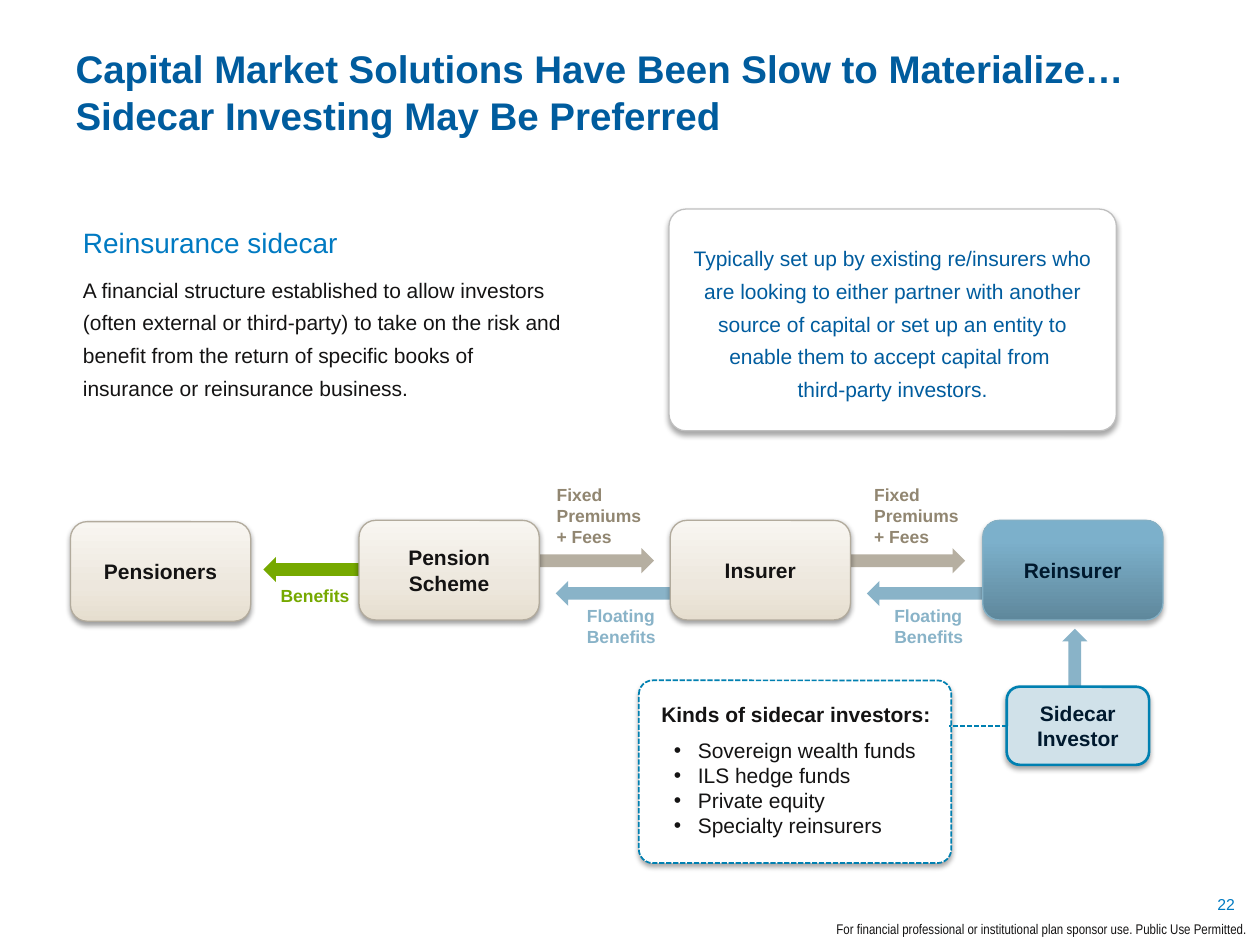
from lxml import etree
from pptx import Presentation
from pptx import util as u
from pptx.dml.color import RGBColor
from pptx.enum import dml, shapes, text
from pptx.oxml.ns import qn

PX = 9144  # 100 px to the inch
FONT = "Arial"
COLORS = {
    "title": "005C9E", "heading": "007AC2", "ink": "141313", "navy": "00192E",
    "white": "FFFFFF", "grey": "BFBFBF", "teal": "0080B1", "pale": "D0E1E9",
    "premium": "B6AFA1", "premium_text": "918671", "benefit": "76A900",
    "floating": "89B3C8", "sand_edge": "B2AB9D", "blue_edge": "84B0C5",
}
SAND = [(0, "E6DECF"), (35, "EDE7DD"), (100, "F8F6F1")]
BLUE = [(0, "5F889C"), (80, "7CB0CB"), (100, "7BB2CD")]
CENTER, RIGHT = text.PP_ALIGN.CENTER, text.PP_ALIGN.RIGHT

prs = Presentation()
prs.slide_width, prs.slide_height = 1000 * PX, 750 * PX
slide = prs.slides.add_slide(prs.slide_layouts[5])


def write(frame, lines, size, color, bold=False, align=None, font=FONT):
    """Add one paragraph per line; a newline inside a line is a soft break."""
    for number, line in enumerate(lines):
        para = frame.paragraphs[0] if number == 0 and not frame.text else frame.add_paragraph()
        para.alignment = align
        for part, words in enumerate(line.split("\n")):
            if part:
                para.add_line_break()
            run = para.add_run()
            run.text = words
            run.font.name, run.font.size, run.font.bold = font, u.Pt(size), bold
            run.font.color.rgb = RGBColor.from_string(COLORS[color])
    return para


def add_box(box, fill, line, weight=0.75, corner=None, shadow=(35, 1.8)):
    """Add a rounded box with a soft shadow; fill is a colour name or gradient stops."""
    shape = slide.shapes.add_shape(shapes.MSO_SHAPE.ROUNDED_RECTANGLE, *[n * PX for n in box])
    if corner:
        shape.adjustments[0] = corner
    if isinstance(fill, str):
        shape.fill.solid()
        shape.fill.fore_color.rgb = RGBColor.from_string(COLORS[fill])
    else:
        shape.fill.gradient()
        shape.fill.gradient_angle = 90
        stops = shape._element.spPr.find(qn("a:gradFill")).find(qn("a:gsLst"))
        for stop in list(stops):
            stops.remove(stop)
        for percent, color in fill:
            stop = etree.SubElement(stops, qn("a:gs"), pos=str(percent * 1000))
            etree.SubElement(stop, qn("a:srgbClr"), val=color)
    shape.line.color.rgb = RGBColor.from_string(COLORS[line])
    shape.line.width = u.Pt(weight)
    shape.shadow.inherit = False
    opacity, distance = shadow
    effects = shape._element.spPr.find(qn("a:effectLst"))
    outer = etree.SubElement(effects, qn("a:outerShdw"), blurRad=str(u.Pt(3.1)),
                             dist=str(u.Pt(distance)), dir="5400000", rotWithShape="0")
    black = etree.SubElement(outer, qn("a:srgbClr"), val="000000")
    etree.SubElement(black, qn("a:alpha"), val=str(opacity * 1000))
    shape.text_frame.word_wrap = True
    shape.text_frame.vertical_anchor = text.MSO_ANCHOR.MIDDLE
    return shape


# Title
title = slide.shapes.title
title.left, title.top, title.width, title.height = 50 * PX, 31 * PX, 950 * PX, 125 * PX
title.text_frame.auto_size = text.MSO_AUTO_SIZE.NONE
title.text_frame.vertical_anchor = text.MSO_ANCHOR.TOP
write(title.text_frame,
      ["Capital Market Solutions Have Been Slow to Materialize…\nSidecar Investing May Be Preferred"],
      22, "title", True, text.PP_ALIGN.LEFT)

# Callout
callout = add_box((531, 166, 355, 176), "white", "grey", corner=0.076)
write(callout.text_frame,
      ["Typically set up by existing re/insurers who are looking to either partner with another "
       "source of capital or set up an entity to enable them to accept capital from \n"
       "third-party investors."], 12, "title", align=CENTER).line_spacing = 1.3

# Flow arrows: left, top, rotation, colour
for left, top, rotation, color in [
    (427, 435, 180, "premium"), (674, 435, 180, "premium"),
    (209, 442, 0, "benefit"),
    (441, 461, 0, "floating"), (688, 461, 0, "floating"),
    (807, 535, 90, "floating"),
]:
    arrow = slide.shapes.add_shape(shapes.MSO_SHAPE.LEFT_ARROW,
                                   left * PX, top * PX, 92 * PX, 20 * PX)
    arrow.rotation = rotation
    arrow.fill.solid()
    arrow.fill.fore_color.rgb = RGBColor.from_string(COLORS[color])
    arrow.line.fill.background()
    arrow.shadow.inherit = False

# Parties in the chain
for party, left, top in [("Pensioners", 56, 414), ("Pension Scheme", 285, 413), ("Insurer", 532, 413)]:
    box = add_box((left, top, 143, 79), SAND, "sand_edge", shadow=(38, 1.6))
    write(box.text_frame, [party], 12, "ink", True, CENTER)
reinsurer = add_box((780, 413, 143, 79), BLUE, "blue_edge")
write(reinsurer.text_frame, ["Reinsurer"], 12, "navy", True, CENTER)
sidecar = add_box((799, 545, 113, 62), "pale", "teal", 1.5)
write(sidecar.text_frame, ["Sidecar Investor"], 12, "navy", True, CENTER)

# Investor panel and its dashed link
panel = add_box((507, 540, 248, 145), "white", "teal", 1, 0.076)
link = slide.shapes.add_connector(shapes.MSO_CONNECTOR.STRAIGHT,
                                  799 * PX, 576 * PX, 753 * PX, 576 * PX)
link.line.color.rgb = RGBColor.from_string(COLORS["teal"])
link.line.width = u.Pt(1)
etree.SubElement(link._element.spPr, qn("a:effectLst"))
for dashed in (panel, link):
    dashed.line.dash_style = dml.MSO_LINE.SQUARE_DOT

# Text boxes: frame, wrap, lines, size, colour, bold, alignment, font
premiums = ["Fixed", "Premiums", "+ Fees"]
floating = ["Floating", "Benefits"]
frames = []
for frame, wrap, *content in [
    ((56, 174, 401, 150), True, ["Reinsurance sidecar"], 16, "heading"),
    ((515, 552, 236, 140), False, ["Kinds of sidecar investors:"], 12, "ink", True),
    ((432, 379, 91, 61), True, premiums, 10, "premium_text", True),
    ((684, 379, 104, 61), True, premiums, 10, "premium_text", True),
    ((456, 475, 76, 44), False, floating, 10, "floating", True),
    ((700, 475, 76, 44), False, floating, 10, "floating", True),
    ((209, 459, 79, 27), False, [" Benefits"], 10, "benefit", True),
    ((933, 705, 57, 25), True, ["22"], 9, "heading", False, RIGHT),
    ((464, 726, 536, 24), True,
     ["For financial professional or institutional plan sponsor use. Public Use Permitted."],
     8, "ink", False, RIGHT, "Arial Narrow"),
]:
    label = slide.shapes.add_textbox(*[n * PX for n in frame]).text_frame
    label.word_wrap = wrap
    label.auto_size = text.MSO_AUTO_SIZE.SHAPE_TO_FIT_TEXT
    write(label, *content)
    frames.append(label)
definition, investors = frames[:2]
frames[-2].vertical_anchor = text.MSO_ANCHOR.MIDDLE

# Definition body
body = write(definition,
             ["A financial structure established to allow investors (often external or third-party) "
              "to take on the risk and benefit from the return of specific books of insurance or "
              "reinsurance business."], 12, "ink")
body.line_spacing, body.space_before = 1.3, u.Pt(6)

# Bulleted investor kinds
write(investors, ["Sovereign wealth funds", "ILS hedge funds", "Private equity",
                  "Specialty reinsurers"], 12, "ink")
kinds = investors.paragraphs[1:]
kinds[0].space_before = u.Pt(6)
for kind in kinds:
    props = kind._p.get_or_add_pPr()
    props.set("marL", str(29 * PX))
    props.set("indent", str(-19 * PX))
    etree.SubElement(props, qn("a:buFont"), typeface=FONT)
    etree.SubElement(props, qn("a:buChar"), char="•")

prs.save("out.pptx")
